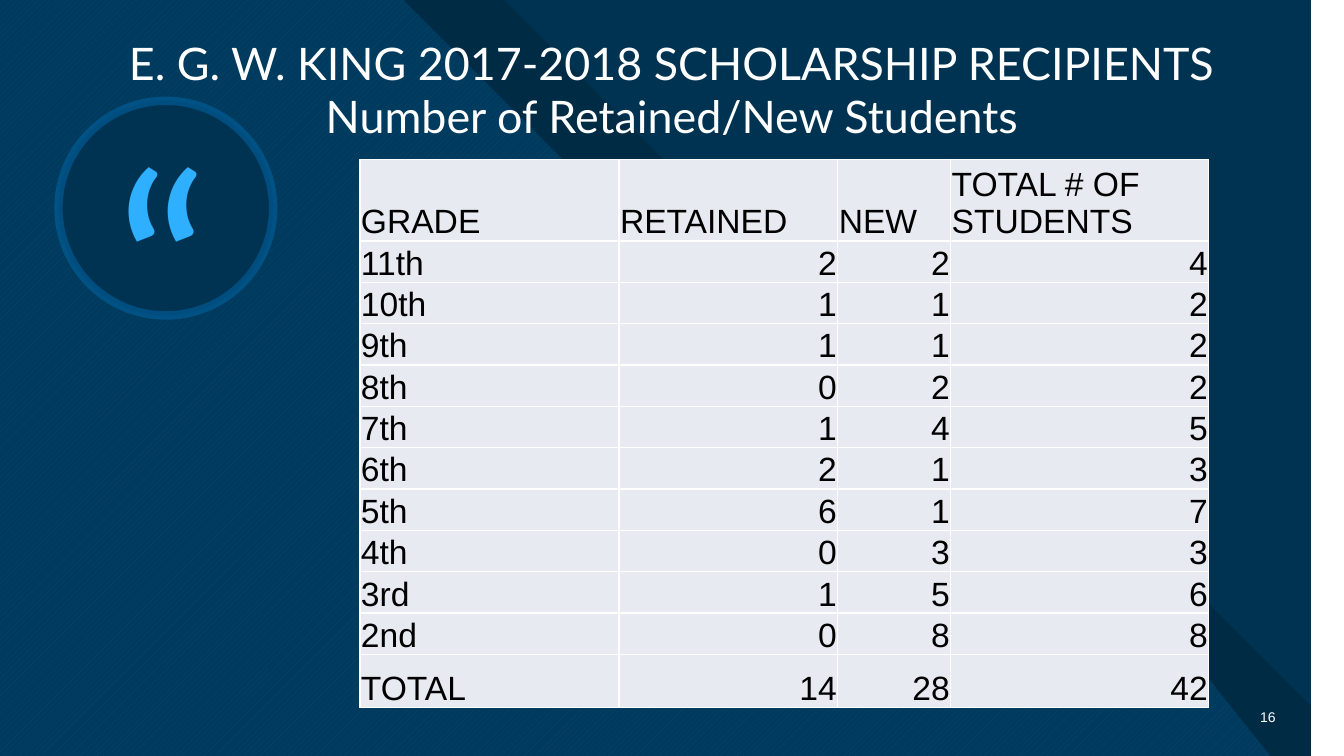
from dataclasses import dataclass

from lxml.etree import SubElement
from pptx import Presentation
from pptx.dml.color import RGBColor
from pptx.enum.dml import MSO_PATTERN
from pptx.enum.shapes import MSO_SHAPE
from pptx.enum.text import MSO_ANCHOR, PP_ALIGN
from pptx.oxml.ns import qn
from pptx.util import Inches, Pt


@dataclass(frozen=True)
class Theme:
    navy: str = "003352"
    black: str = "000000"
    white: str = "FFFFFF"
    blue: str = "0065A4"
    teal: str = "47C3D3"
    sky: str = "2FAFFF"
    cell: str = "E7EAF0"
    heading_font: str = "Lato"
    body_font: str = "Arial"
    title_size: int = 32
    quote_size: int = 184
    table_size: int = 24
    number_size: int = 10


@dataclass(frozen=True)
class Layer:
    points: tuple[tuple[float, float], ...]
    fill: str
    opacity: int = 100
    pattern_color: str = ""


@dataclass(frozen=True)
class Label:
    text: str
    left: float
    top: float
    width: float
    height: float
    font: str
    size: int
    color: str
    align: PP_ALIGN = PP_ALIGN.CENTER
    anchor: MSO_ANCHOR = MSO_ANCHOR.TOP


THEME = Theme()
WIDTH, HEIGHT = 13.33, 7.5

LAYERS = (
    Layer(((0, 0), (WIDTH, 0), (WIDTH, HEIGHT), (0, HEIGHT)), THEME.navy),
    Layer(((0.42, 0), (4.9, 0), (7.88, 2.97), (9.14, 2.97), (WIDTH, 7.17),
           (WIDTH, HEIGHT), (0.42, HEIGHT)), THEME.black),
    Layer(((0, 0), (4.49, 0), (7.46, 2.97), (8.72, 2.97), (13.25, HEIGHT),
           (0, HEIGHT)), THEME.blue, pattern_color=THEME.teal),
    Layer(((0, 0), (6.95, 0), (9.92, 2.97), (11.18, 2.97), (WIDTH, 5.13),
           (WIDTH, HEIGHT), (0, HEIGHT)), THEME.navy, opacity=85),
)

LABELS = (
    Label("“", 1.05, 1.01, 1.1, 3.13, THEME.heading_font, THEME.quote_size, THEME.sky),
    Label("E. G. W. KING 2017-2018 SCHOLARSHIP RECIPIENTS\vNumber of Retained/New Students",
          0.52, 0.3, 12.29, 5.52, THEME.heading_font, THEME.title_size, THEME.white),
    Label("16", 12.31, 6.91, 0.44, 0.4, THEME.body_font, THEME.number_size, THEME.white,
          PP_ALIGN.RIGHT, MSO_ANCHOR.MIDDLE),
)

HEADERS = ("GRADE", "RETAINED", "NEW", "TOTAL # OF STUDENTS")
STUDENTS = (
    ("11th", 2, 2, 4),
    ("10th", 1, 1, 2),
    ("9th", 1, 1, 2),
    ("8th", 0, 2, 2),
    ("7th", 1, 4, 5),
    ("6th", 2, 1, 3),
    ("5th", 6, 1, 7),
    ("4th", 0, 3, 3),
    ("3rd", 1, 5, 6),
    ("2nd", 0, 8, 8),
    ("TOTAL", 14, 28, 42),
)
COLUMN_WIDTHS = (2.57, 2.17, 1.12, 2.56)
ROW_HEIGHTS = (0.74, *[0.41] * 10, 0.53)


def rgb(color: str) -> RGBColor:
    return RGBColor.from_string(color)


def set_opacity(fill, percent: int) -> None:
    color = fill._xPr.find(qn("a:solidFill"))[0]
    SubElement(color, qn("a:alpha"), val=str(percent * 1000))


def style_para(para, font: str, size: int, color: str, align: PP_ALIGN) -> None:
    para.alignment = align
    para.font.name = font
    para.font.size = Pt(size)
    para.font.color.rgb = rgb(color)


def add_layer(page, layer: Layer) -> None:
    builder = page.shapes.build_freeform(*layer.points[0], scale=Inches(1))
    builder.add_line_segments(layer.points[1:], close=True)
    shape = builder.convert_to_shape()
    shape.shadow.inherit = False
    shape.line.fill.background()
    if layer.pattern_color:
        shape.fill.patterned()
        shape.fill.pattern = MSO_PATTERN.WIDE_UPWARD_DIAGONAL
        shape.fill.fore_color.rgb = rgb(layer.pattern_color)
        shape.fill.back_color.rgb = rgb(layer.fill)
        return
    shape.fill.solid()
    shape.fill.fore_color.rgb = rgb(layer.fill)
    if layer.opacity < 100:
        set_opacity(shape.fill, layer.opacity)


def add_quote_ring(page) -> None:
    ring = page.shapes.add_shape(
        MSO_SHAPE.OVAL, Inches(0.58), Inches(1), Inches(2.13), Inches(2.13))
    ring.shadow.inherit = False
    ring.fill.solid()
    ring.fill.fore_color.rgb = rgb(THEME.navy)
    ring.line.width = Pt(6)
    ring.line.color.rgb = rgb(THEME.blue)
    set_opacity(ring.line.fill, 55)


def add_label(page, label: Label) -> None:
    box = page.shapes.add_textbox(
        Inches(label.left), Inches(label.top), Inches(label.width), Inches(label.height))
    frame = box.text_frame
    frame.word_wrap = True
    frame.vertical_anchor = label.anchor
    para = frame.paragraphs[0]
    para.text = label.text
    style_para(para, label.font, label.size, label.color, label.align)


def add_borders(cell) -> None:
    properties = cell._tc.get_or_add_tcPr()
    for side in ("lnL", "lnR", "lnT", "lnB"):
        line = SubElement(properties, qn(f"a:{side}"), w=str(Pt(1)))
        fill = SubElement(line, qn("a:solidFill"))
        SubElement(fill, qn("a:srgbClr"), val=THEME.white)


def fill_cell(cell, value: str | int) -> None:
    add_borders(cell)
    cell.fill.solid()
    cell.fill.fore_color.rgb = rgb(THEME.cell)
    cell.vertical_anchor = MSO_ANCHOR.BOTTOM
    cell.margin_left = cell.margin_right = cell.margin_top = Inches(0.01)
    cell.margin_bottom = 0
    para = cell.text_frame.paragraphs[0]
    para.text = str(value)
    align = PP_ALIGN.RIGHT if isinstance(value, int) else PP_ALIGN.LEFT
    style_para(para, THEME.body_font, THEME.table_size, THEME.black, align)


def add_student_table(page) -> None:
    rows = (HEADERS, *STUDENTS)
    table = page.shapes.add_table(
        len(rows), len(HEADERS), Inches(3.57), Inches(1.58),
        Inches(sum(COLUMN_WIDTHS)), Inches(sum(ROW_HEIGHTS))).table
    table.first_row = False
    table.horz_banding = False
    for column, width in zip(table.columns, COLUMN_WIDTHS):
        column.width = Inches(width)
    for row, height, values in zip(table.rows, ROW_HEIGHTS, rows):
        row.height = Inches(height)
        for cell, value in zip(row.cells, values):
            fill_cell(cell, value)


def main() -> None:
    deck = Presentation()
    deck.slide_width, deck.slide_height = Inches(WIDTH), Inches(HEIGHT)
    page = deck.slides.add_slide(deck.slide_layouts[6])
    for layer in LAYERS:
        add_layer(page, layer)
    add_quote_ring(page)
    for label in LABELS:
        add_label(page, label)
    add_student_table(page)
    deck.save("out.pptx")


if __name__ == "__main__":
    main()
